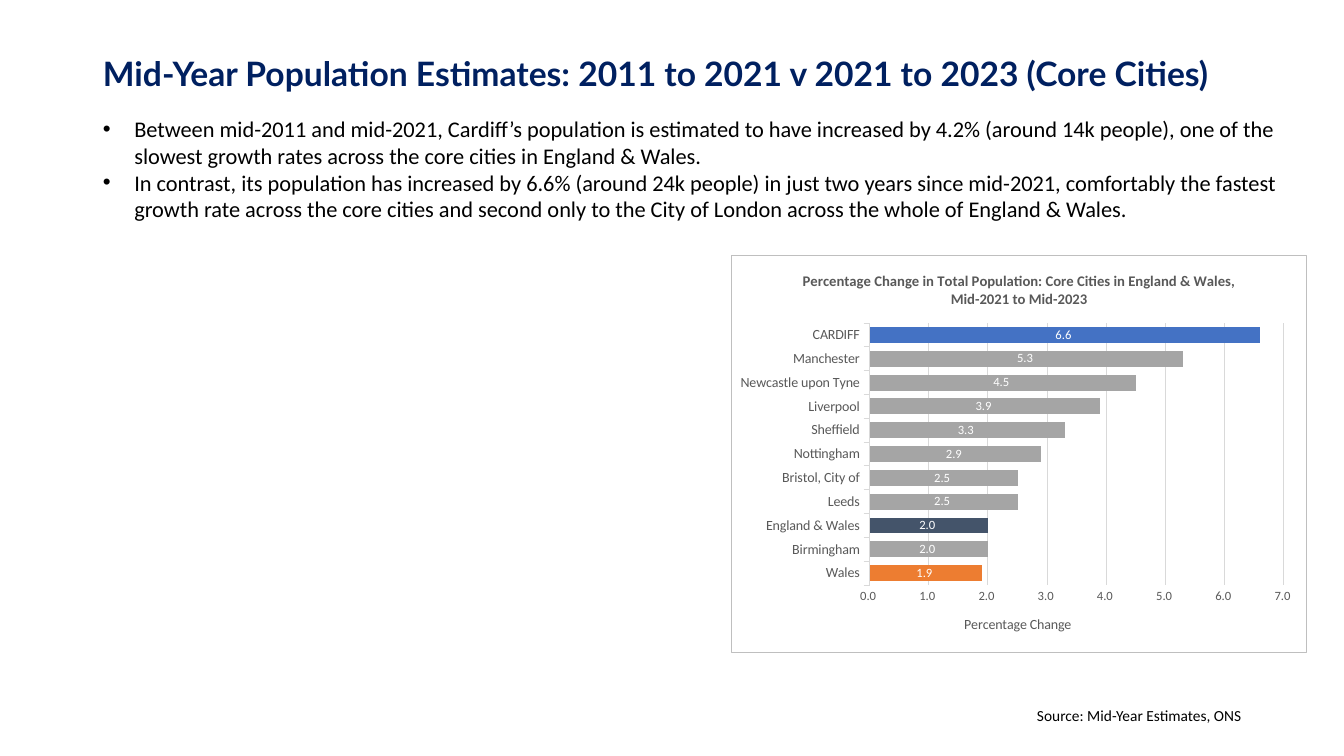
from lxml import etree
from pptx import Presentation
from pptx.chart.data import CategoryChartData
from pptx.dml.color import RGBColor
from pptx.enum.chart import XL_CHART_TYPE, XL_LABEL_POSITION, XL_TICK_MARK
from pptx.enum.text import MSO_ANCHOR, MSO_AUTO_SIZE, PP_ALIGN
from pptx.oxml import parse_xml
from pptx.oxml.ns import nsdecls, qn
from pptx.util import Cm, Pt

NAVY, BLACK, WHITE = "002060", "000000", "FFFFFF"
LABEL_GREY, GRID_GREY, BAR_GREY = "595959", "D9D9D9", "A5A5A5"
HIGHLIGHTS = {"CARDIFF": "4472C4", "England & Wales": "44546A", "Wales": "ED7D31"}
NUMBER_FORMAT = r"0.0_ ;\-0.0\ "

GROWTH = {
    "Wales": 1.9, "Birmingham": 2.0, "England & Wales": 2.0, "Leeds": 2.5,
    "Bristol, City of": 2.5, "Nottingham": 2.9, "Sheffield": 3.3,
    "Liverpool": 3.9, "Newcastle upon Tyne": 4.5, "Manchester": 5.3,
    "CARDIFF": 6.6,
}
FINDINGS = [
    "Between mid-2011 and mid-2021, Cardiff’s population is estimated to have "
    "increased by 4.2% (around 14k people), one of the slowest growth rates "
    "across the core cities in England & Wales.",
    "In contrast, its population has increased by 6.6% (around 24k people) in "
    "just two years since mid-2021, comfortably the fastest growth rate across "
    "the core cities and second only to the City of London across the whole of "
    "England & Wales.",
]


def color(hex_value):
    return RGBColor.from_string(hex_value)


def style_font(font, size, ink, name="Calibri", bold=False):
    font.name, font.size, font.bold = name, Pt(size), bold
    font.color.rgb = color(ink)


def style_line(line, ink):
    line.color.rgb = color(ink)
    line.width = Pt(0.75)


def write(paragraph, text, size=16, ink=BLACK, name="Calibri", bold=False,
          align=PP_ALIGN.LEFT, spacing=1.0):
    paragraph.alignment = align
    paragraph.line_spacing = spacing
    paragraph.space_before = paragraph.space_after = Pt(0)
    span = paragraph.add_run()
    span.text = text
    style_font(span.font, size, ink, name, bold)


def place(shape, left, top, width, height):
    shape.left, shape.top = Cm(left), Cm(top)
    shape.width, shape.height = Cm(width), Cm(height)


def add_heading(page, *box):
    heading = page.shapes.title
    place(heading, *box)
    frame = heading.text_frame
    frame.vertical_anchor = MSO_ANCHOR.MIDDLE
    frame.auto_size = MSO_AUTO_SIZE.NONE
    write(frame.paragraphs[0],
          "Mid-Year Population Estimates: 2011 to 2021 v 2021 to 2023 (Core Cities)",
          size=24, ink=NAVY, name="Lato", bold=True, spacing=0.9)


def add_findings(page, *box):
    body = page.placeholders[1]
    place(body, *box)
    frame = body.text_frame
    frame.auto_size = MSO_AUTO_SIZE.NONE
    for index, finding in enumerate(FINDINGS):
        paragraph = frame.add_paragraph() if index else frame.paragraphs[0]
        properties = paragraph._p.get_or_add_pPr()
        properties.set("marL", str(Cm(0.79)))
        properties.set("indent", str(-Cm(0.79)))
        write(paragraph, finding)


def add_source(page, left, top, width, height):
    note = page.shapes.add_textbox(Cm(left), Cm(top), Cm(width), Cm(height))
    note.text_frame.word_wrap = True
    write(note.text_frame.paragraphs[0], "Source: Mid-Year Estimates, ONS",
          size=11, align=PP_ALIGN.RIGHT)


def set_layout(element, position, **fractions):
    """Fix a chart part at fractions of the chart area."""
    for old in element.findall(qn("c:layout")):
        element.remove(old)
    layout = parse_xml(f"<c:layout {nsdecls('c')}><c:manualLayout/></c:layout>")
    for tag, value in fractions.items():
        etree.SubElement(layout[0], qn(f"c:{tag}")).set("val", str(value))
    element.insert(position, layout)


def frame_chart(chart):
    """Give the chart area a white fill and a thin grey border."""
    area = parse_xml(
        f"<c:spPr {nsdecls('c', 'a')}>"
        f'<a:solidFill><a:srgbClr val="{WHITE}"/></a:solidFill>'
        f'<a:ln w="{Pt(0.75)}"><a:solidFill><a:srgbClr val="BFBFBF"/></a:solidFill></a:ln>'
        "</c:spPr>")
    chart._chartSpace.find(qn("c:chart")).addnext(area)


def style_axes(chart):
    cities, change = chart.category_axis, chart.value_axis
    cities.major_tick_mark = XL_TICK_MARK.OUTSIDE
    cities.has_major_gridlines = False
    style_font(cities.tick_labels.font, 10, LABEL_GREY)
    style_line(cities.format.line, GRID_GREY)

    change.minimum_scale, change.maximum_scale, change.major_unit = 0, 7, 1
    change.major_tick_mark = XL_TICK_MARK.NONE
    change.has_major_gridlines = True
    style_line(change.major_gridlines.format.line, GRID_GREY)
    change.format.line.fill.background()
    style_font(change.tick_labels.font, 9, LABEL_GREY)
    change.tick_labels.number_format = NUMBER_FORMAT
    change.tick_labels.number_format_is_linked = False
    write(change.axis_title.text_frame.paragraphs[0], "Percentage Change",
          size=10, ink=LABEL_GREY, align=PP_ALIGN.CENTER)
    set_layout(change.axis_title._element, 1,
               xMode="edge", yMode="edge", x=0.4, y=0.9)


def style_bars(plot):
    plot.gap_width = 50
    plot.vary_by_categories = False
    series = plot.series[0]
    series.format.fill.solid()
    series.format.fill.fore_color.rgb = color(BAR_GREY)
    for index, city in enumerate(GROWTH):
        if city in HIGHLIGHTS:
            fill = series.points[index].format.fill
            fill.solid()
            fill.fore_color.rgb = color(HIGHLIGHTS[city])
    labels = series.data_labels
    labels.show_value = True
    labels.position = XL_LABEL_POSITION.CENTER
    labels.number_format = NUMBER_FORMAT
    labels.number_format_is_linked = False
    style_font(labels.font, 9, WHITE)


def add_growth_chart(page, left, top, width, height):
    data = CategoryChartData(number_format=NUMBER_FORMAT)
    data.categories = list(GROWTH)
    data.add_series("Series 1", list(GROWTH.values()))
    chart = page.shapes.add_chart(XL_CHART_TYPE.BAR_CLUSTERED, Cm(left), Cm(top),
                                  Cm(width), Cm(height), data).chart
    style_font(chart.font, 10, BLACK)
    chart.has_legend = False
    write(chart.chart_title.text_frame.paragraphs[0],
          "Percentage Change in Total Population: Core Cities in England & Wales, "
          "Mid-2021 to Mid-2023",
          size=10.5, ink=LABEL_GREY, bold=True, align=PP_ALIGN.CENTER)
    chart.chart_title.include_in_layout = False
    style_axes(chart)
    style_bars(chart.plots[0])
    set_layout(chart._chartSpace.find(f".//{qn('c:plotArea')}"), 0,
               layoutTarget="inner", xMode="edge", yMode="edge",
               x=0.24, y=0.17, w=0.72, h=0.66)
    frame_chart(chart)


def main():
    deck = Presentation()
    deck.slide_width, deck.slide_height = Cm(33.87), Cm(19.05)
    page = deck.slides.add_slide(deck.slide_layouts[1])
    add_heading(page, 2.34, 1.02, 29.21, 1.75)
    add_source(page, 21.84, 17.68, 9.7, 0.74)
    add_findings(page, 2.34, 2.77, 30.25, 3.0)
    add_growth_chart(page, 18.42, 6.43, 14.53, 10.03)
    deck.save("out.pptx")


if __name__ == "__main__":
    main()
